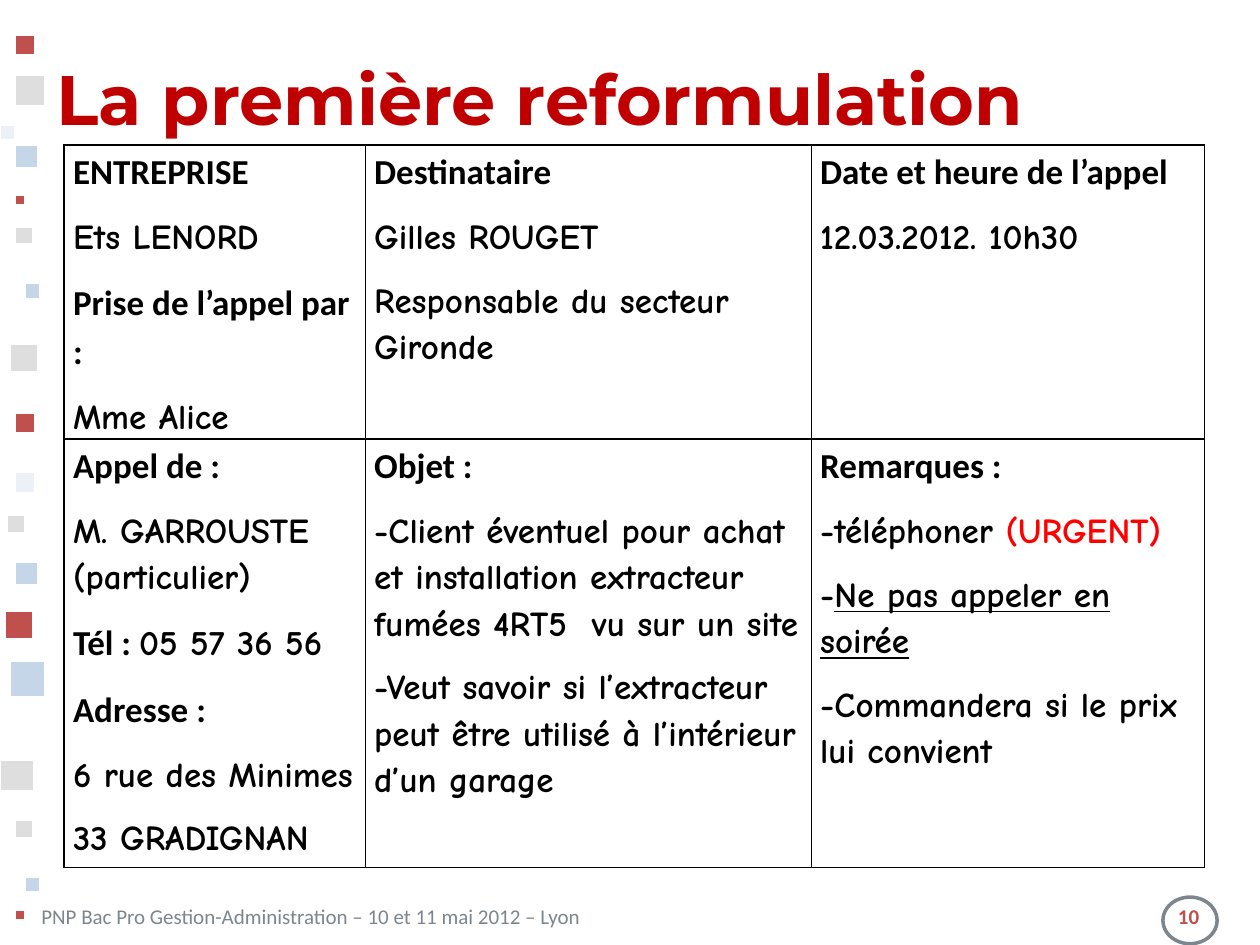
"""Build the slide showing the first rewording of a phone message."""
from lxml import etree
from pptx import Presentation
from pptx.dml.color import RGBColor
from pptx.enum import shapes, text
from pptx.oxml import ns
from pptx.util import Inches, Pt

THEME = {
    "red": "C00000", "mark": "C0504D", "grey": "7D868D", "ink": "000000",
    "white": "FFFFFF", "urgent": "FF0000",
    "title": 40, "body": 20, "foot": 12,
}

BODY = {"size": Pt(THEME["body"]), "bold": True, "color": THEME["ink"]}
HAND = {**BODY, "name": "Comic Neue"}
STYLES = {
    "title": {"name": "Montserrat", "size": Pt(THEME["title"]), "bold": True, "color": THEME["red"]},
    "foot": {"name": "Calibri", "size": Pt(THEME["foot"]), "color": THEME["grey"]},
    "page": {"name": "Calibri", "size": Pt(THEME["foot"]), "bold": True, "color": THEME["mark"]},
    "head": {**BODY, "name": "Calibri"},
    "hand": HAND,
    "alert": {**HAND, "color": THEME["urgent"]},
    "under": {**HAND, "underline": True},
}

TITLE = [("title", "La première reformulation")]
FOOT = [("foot", "PNP Bac Pro Gestion-Administration – 10 et 11 mai 2012 – Lyon\t"), ("page", "10")]

ROWS = [
    [
        [[("head", "ENTREPRISE")], [("hand", "Ets LENORD")],
         [("head", "Prise de l’appel par :")], [("hand", "Mme Alice")]],
        [[("head", "Destinataire")], [("hand", "Gilles ROUGET")],
         [("hand", "Responsable du secteur Gironde")]],
        [[("head", "Date et heure de l’appel")], [("hand", "12.03.2012. 10h30")]],
    ],
    [
        [[("head", "Appel de :")], [("hand", "M. GARROUSTE (particulier)")],
         [("head", "Tél : "), ("hand", "05 57 36 56")], [("head", "Adresse :")],
         [("hand", "6 rue des Minimes")], [("hand", "33 GRADIGNAN")]],
        [[("head", "Objet :")],
         [("hand", "-Client éventuel pour achat et installation extracteur fumées 4RT5  vu sur un site")],
         [("hand", "-Veut savoir si l’extracteur peut être utilisé à l’intérieur d’un garage")]],
        [[("head", "Remarques :")], [("hand", "-téléphoner "), ("alert", "(URGENT)")],
         [("hand", "-"), ("under", "Ne pas appeler en soirée")],
         [("hand", "-Commandera si le prix lui convient")]],
    ],
]
WIDTHS = [2.39, 3.54, 3.12]
HEIGHTS = [2.19, 3.4]

SQUARES = {
    ("B8CCE4", 80): [(0.08, 5.25, 0.28), (0.12, 1.15, 0.18), (0.2, 2.25, 0.12),
                     (0.12, 4.46, 0.18), (0.2, 6.96, 0.12)],
    ("DBE5F1", 50): [(0, 0.99, 0.12), (0.12, 3.75, 0.16)],
    ("BFBFBF", 50): [(0, 6.03, 0.27, 0.25), (0.12, 1.8, 0.14), (0.08, 2.73, 0.22),
                     (0.12, 0.6, 0.24), (0.06, 4.09, 0.14), (0.12, 6.51, 0.14)],
    (THEME["mark"], 100): [(0.12, 3.28, 0.16), (0.04, 4.85, 0.22), (0.12, 0.28, 0.16),
                           (0.12, 7.22, 0.08), (0.12, 1.55, 0.08)],
}


def rgb(code):
    return RGBColor.from_string(code)


def node(up, tag, **attrs):
    return etree.SubElement(up, ns.qn(tag), {k: str(v) for k, v in attrs.items()})


def write(para, runs):
    for style, words in runs:
        run = para.add_run()
        run.text = words
        for key, value in STYLES[style].items():
            if key == "color":
                run.font.color.rgb = rgb(value)
            else:
                setattr(run.font, key, value)


def label(slide, box, runs, anchor):
    frame = slide.shapes.add_textbox(*map(Inches, box)).text_frame
    frame.word_wrap = True
    frame.vertical_anchor = anchor
    write(frame.paragraphs[0], runs)
    return frame.paragraphs[0]


def shape(slide, kind, box, line, width, fill=None, alpha=100):
    item = slide.shapes.add_shape(kind, *map(Inches, box))
    item.shadow.inherit = False
    item.line.color.rgb = rgb(line)
    item.line.width = Pt(width)
    if fill is None:
        item.fill.background()
        return
    item.fill.solid()
    item.fill.fore_color.rgb = rgb(fill)
    if alpha < 100:
        color = item.fill._xPr.find(".//" + ns.qn("a:srgbClr"))
        node(color, "a:alpha", val=alpha * 1000)


def border(cell):
    props = cell._tc.get_or_add_tcPr()
    for spot, side in enumerate(("L", "R", "T", "B")):
        line = node(props, "a:ln" + side, w=Pt(1))
        node(node(line, "a:solidFill"), "a:srgbClr", val=THEME["ink"])
        props.insert(spot, line)


def fill(cell, paras):
    cell.fill.background()
    border(cell)
    for key, gap in {"left": 0.07, "right": 0.07, "top": 0, "bottom": 0}.items():
        setattr(cell, "margin_" + key, Inches(gap))
    frame = cell.text_frame
    for i, runs in enumerate(paras):
        para = frame.add_paragraph() if i else frame.paragraphs[0]
        para.line_spacing = 1.15
        para.space_after = Pt(10)
        write(para, runs)


def grid(slide):
    box = (0.51, 1.15, sum(WIDTHS), sum(HEIGHTS))
    table = slide.shapes.add_table(len(HEIGHTS), len(WIDTHS), *map(Inches, box)).table
    table.first_row = table.horz_banding = False
    for col, wide in zip(table.columns, WIDTHS):
        col.width = Inches(wide)
    for row, high, cells in zip(table.rows, HEIGHTS, ROWS):
        row.height = Inches(high)
        for cell, paras in zip(row.cells, cells):
            fill(cell, paras)


def main():
    deck = Presentation()
    deck.slide_width, deck.slide_height = Inches(10), Inches(7.5)
    slide = deck.slides.add_slide(deck.slide_layouts[6])
    foot = label(slide, (0.23, 7.12, 9.59, 0.3), FOOT, text.MSO_ANCHOR.TOP)
    tabs = node(foot._p.get_or_add_pPr(), "a:tabLst")
    node(tabs, "a:tab", pos=Inches(9.02), algn="l")
    kinds = shapes.MSO_SHAPE
    shape(slide, kinds.OVAL, (9.23, 7.12, 0.43, 0.37), THEME["grey"], 2)
    for (color, alpha), spots in SQUARES.items():
        for left, top, *size in spots:
            box = (left, top, size[0], size[-1])
            shape(slide, kinds.RECTANGLE, box, THEME["white"], 1, color, alpha)
    label(slide, (0.35, 0.4, 9.45, 0.75), TITLE, text.MSO_ANCHOR.MIDDLE)
    grid(slide)
    deck.save("out.pptx")


if __name__ == "__main__":
    main()
